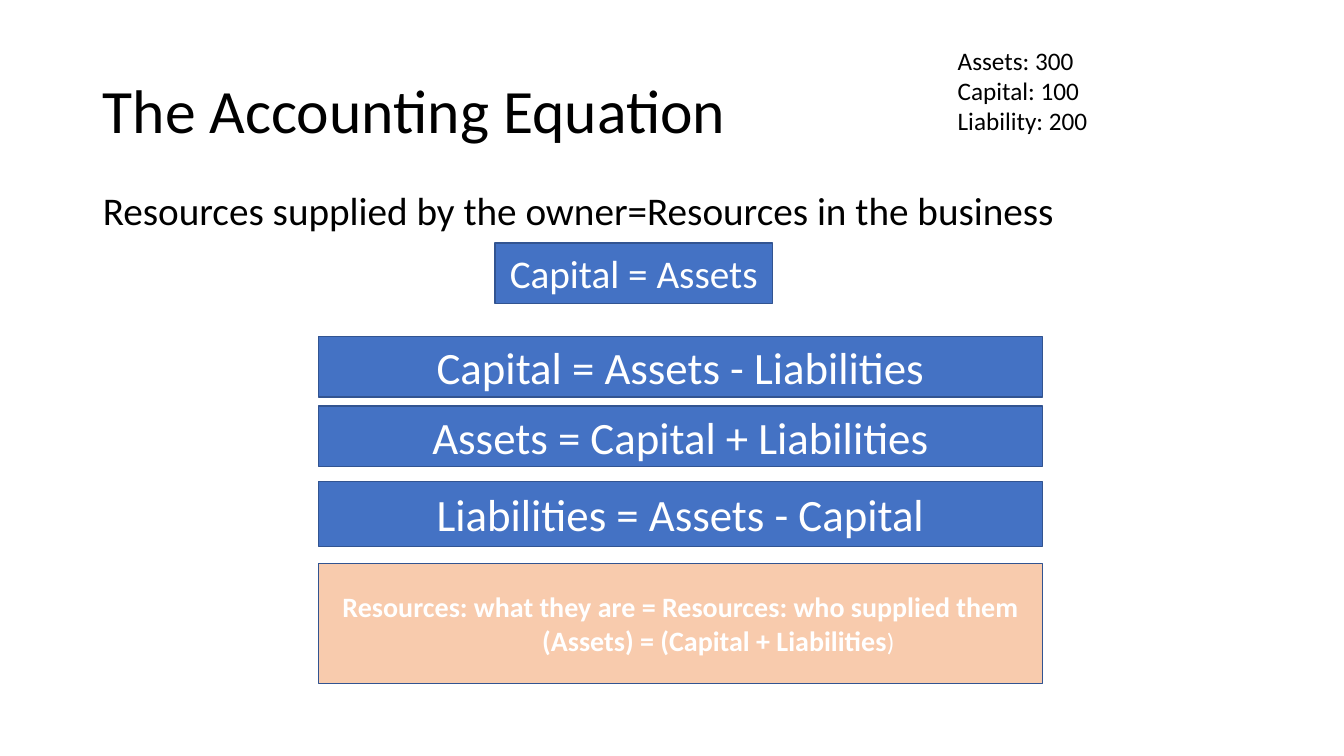
from lxml import etree
from pptx import Presentation
from pptx.dml.color import RGBColor
from pptx.enum.shapes import MSO_SHAPE as Shape
from pptx.enum.text import MSO_ANCHOR as Anchor, MSO_AUTO_SIZE as AutoSize, PP_ALIGN as Align
from pptx.oxml.ns import qn
from pptx.util import Inches, Pt

BLACK, WHITE = "000000", "FFFFFF"
BLUE, PEACH, OUTLINE = "4472C4", "F8CBAD", "325491"
EQUATION_LEFT, EQUATION_WIDTH = 3.16, 7.18


def rgb(value):
    return RGBColor.from_string(value)


def format_text(paragraph, size, color, align=Align.LEFT, bold=False):
    paragraph.alignment = align
    for run in paragraph.runs:
        run.font.name = "Calibri"
        run.font.size = Pt(size)
        run.font.bold = bold
        run.font.color.rgb = rgb(color)


def place(shape, box):
    shape.left, shape.top, shape.width, shape.height = map(Inches, box)


def fill_placeholder(placeholder, box, text, size, anchor):
    place(placeholder, box)
    frame = placeholder.text_frame
    frame.text = text
    frame.word_wrap = True
    frame.auto_size = AutoSize.NONE
    frame.vertical_anchor = anchor
    paragraph = frame.paragraphs[0]
    paragraph.line_spacing = 0.9
    format_text(paragraph, size, BLACK)
    return paragraph


def add_heading(slide, box):
    fill_placeholder(slide.shapes.title, box, "The Accounting Equation", 44, Anchor.MIDDLE)


def add_statement(slide, box):
    paragraph = fill_placeholder(
        slide.placeholders[1], box,
        "Resources supplied by the owner=Resources in the business", 28, Anchor.TOP)
    paragraph.space_before = Pt(10)
    # Plain line without bullet or hanging indent
    properties = paragraph._p.get_or_add_pPr()
    properties.set("marL", "0")
    properties.set("indent", "0")
    etree.SubElement(properties, qn("a:buNone"))


def add_panel(slide, box, text, size, fill=BLUE, bold=False):
    panel = slide.shapes.add_shape(Shape.RECTANGLE, *map(Inches, box))
    panel.shadow.inherit = False
    panel.fill.solid()
    panel.fill.fore_color.rgb = rgb(fill)
    panel.line.color.rgb = rgb(OUTLINE)
    panel.line.width = Pt(1)
    frame = panel.text_frame
    frame.text = text
    frame.word_wrap = True
    frame.vertical_anchor = Anchor.MIDDLE
    for paragraph in frame.paragraphs:
        format_text(paragraph, size, WHITE, Align.CENTER, bold)
    return frame


def add_summary(slide, box):
    frame = add_panel(
        slide, box,
        "Resources: what they are = Resources: who supplied them\n"
        "(Assets) = (Capital + Liabilities",
        20, PEACH, bold=True)
    second_line = frame.paragraphs[1]
    second_line._p.get_or_add_pPr().set("marL", str(Inches(0.75)))
    bracket = second_line.add_run()
    bracket.text = ")"
    bracket.font.name = "Calibri"
    bracket.font.size = Pt(18)
    bracket.font.color.rgb = rgb(WHITE)


def add_figures(slide, box):
    frame = slide.shapes.add_textbox(*map(Inches, box)).text_frame
    frame.text = "Assets: 300\nCapital: 100\nLiability: 200"
    frame.word_wrap = True
    for paragraph in frame.paragraphs:
        format_text(paragraph, 18, BLACK)


def main():
    presentation = Presentation()
    presentation.slide_width = Inches(13.33)
    presentation.slide_height = Inches(7.5)
    slide = presentation.slides.add_slide(presentation.slide_layouts[1])

    # Title and opening statement
    add_heading(slide, (0.92, 0.4, 11.5, 1.45))
    add_statement(slide, (0.92, 1.85, 11.5, 5.1))

    # Basic equation, then its three extended forms
    add_panel(slide, (4.91, 2.41, 2.75, 0.6), "Capital = Assets", 28)
    equations = [
        (3.34, 0.6, "Capital = Assets - Liabilities"),
        (4.03, 0.6, "Assets = Capital + Liabilities"),
        (4.78, 0.64, "Liabilities = Assets - Capital"),
    ]
    for top, height, equation in equations:
        add_panel(slide, (EQUATION_LEFT, top, EQUATION_WIDTH, height), equation, 32)

    # Summary and example figures
    add_summary(slide, (EQUATION_LEFT, 5.59, EQUATION_WIDTH, 1.19))
    add_figures(slide, (9.4, 0.4, 2.12, 1.01))

    presentation.save("out.pptx")


if __name__ == "__main__":
    main()
